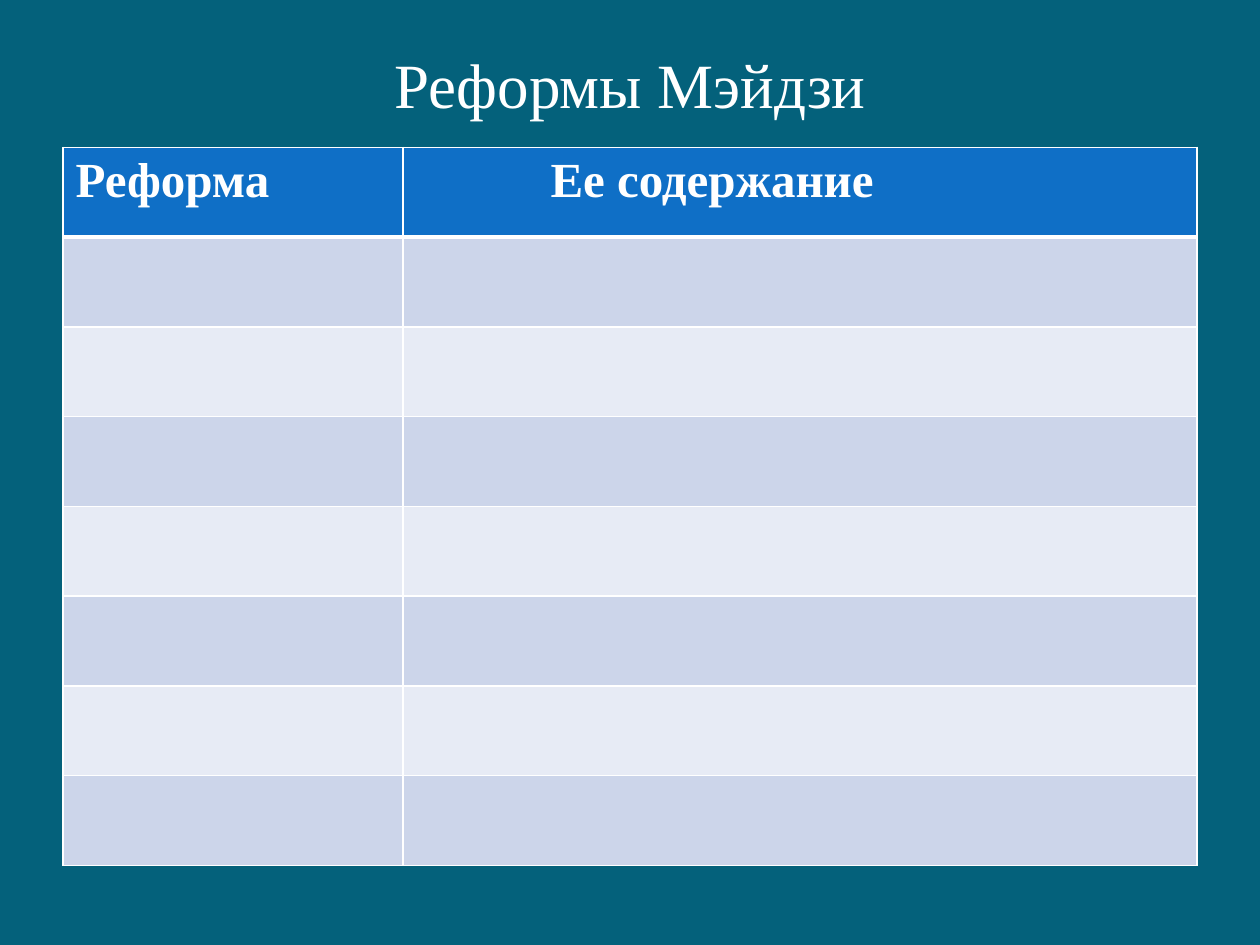
import pptx
import pptx.util
import pptx.dml.color
import pptx.enum.text
import pptx.oxml
import pptx.oxml.ns

Inches = pptx.util.Inches
Pt = pptx.util.Pt
RGB = pptx.dml.color.RGBColor
TEAL = RGB(0x04, 0x61, 0x7B)
BLUE = RGB(0x0F, 0x6F, 0xC6)
DARK = RGB(0xCC, 0xD5, 0xEA)
LIGHT = RGB(0xE7, 0xEB, 0xF5)
WHITE = RGB(0xFF, 0xFF, 0xFF)
FONT = "Times New Roman"
HEADS = ("Реформа", "Ее содержание")
WIDTHS = (2.7, 6.3)
ROWS = 8
HEIGHT = 5.7


def style(frame, size, bold=False):
    for run in frame.paragraphs[0].runs:
        font = run.font
        font.name = FONT
        font.size = Pt(size)
        font.bold = bold
        font.color.rgb = WHITE


def border(cell, sides):
    props = cell._tc.get_or_add_tcPr()
    for spot, (side, width) in enumerate(sides.items()):
        line = pptx.oxml.parse_xml(
            f'<a:ln{side} {pptx.oxml.ns.nsdecls("a")} w="{Pt(width)}">'
            f'<a:solidFill><a:srgbClr val="{WHITE}"/></a:solidFill></a:ln{side}>'
        )
        props.insert(spot, line)


def add_title(slide, text):
    title = slide.shapes.title
    title.left, title.top = Inches(0.5), Inches(0.3)
    title.width, title.height = Inches(9), Inches(0.72)
    frame = title.text_frame
    frame.text = text
    frame.vertical_anchor = pptx.enum.text.MSO_ANCHOR.MIDDLE
    frame.paragraphs[0].alignment = pptx.enum.text.PP_ALIGN.CENTER
    style(frame, 36)


def add_grid(slide):
    table = slide.shapes.add_table(
        ROWS, len(WIDTHS), Inches(0.5), Inches(1.17),
        Inches(sum(WIDTHS)), Inches(HEIGHT)
    ).table
    for col, width in zip(table.columns, WIDTHS):
        col.width = Inches(width)
    for num, row in enumerate(table.rows):
        row.height = Inches(HEIGHT / ROWS)
        fill = BLUE if num == 0 else DARK if num % 2 else LIGHT
        for cell in row.cells:
            cell.fill.solid()
            cell.fill.fore_color.rgb = fill
            border(cell, {"L": 1, "R": 1, "T": 3 if num == 1 else 1,
                          "B": 3 if num == 0 else 1})
    for cell, text in zip(table.rows[0].cells, HEADS):
        cell.text_frame.text = text
        style(cell.text_frame, 28, True)
    table.cell(0, 1).margin_left = Inches(1.17)


def main():
    deck = pptx.Presentation()
    deck.slide_width, deck.slide_height = Inches(10), Inches(7.5)
    slide = deck.slides.add_slide(deck.slide_layouts[5])
    slide.background.fill.solid()
    slide.background.fill.fore_color.rgb = TEAL
    add_title(slide, "Реформы Мэйдзи")
    add_grid(slide)
    deck.save("out.pptx")


if __name__ == "__main__":
    main()
